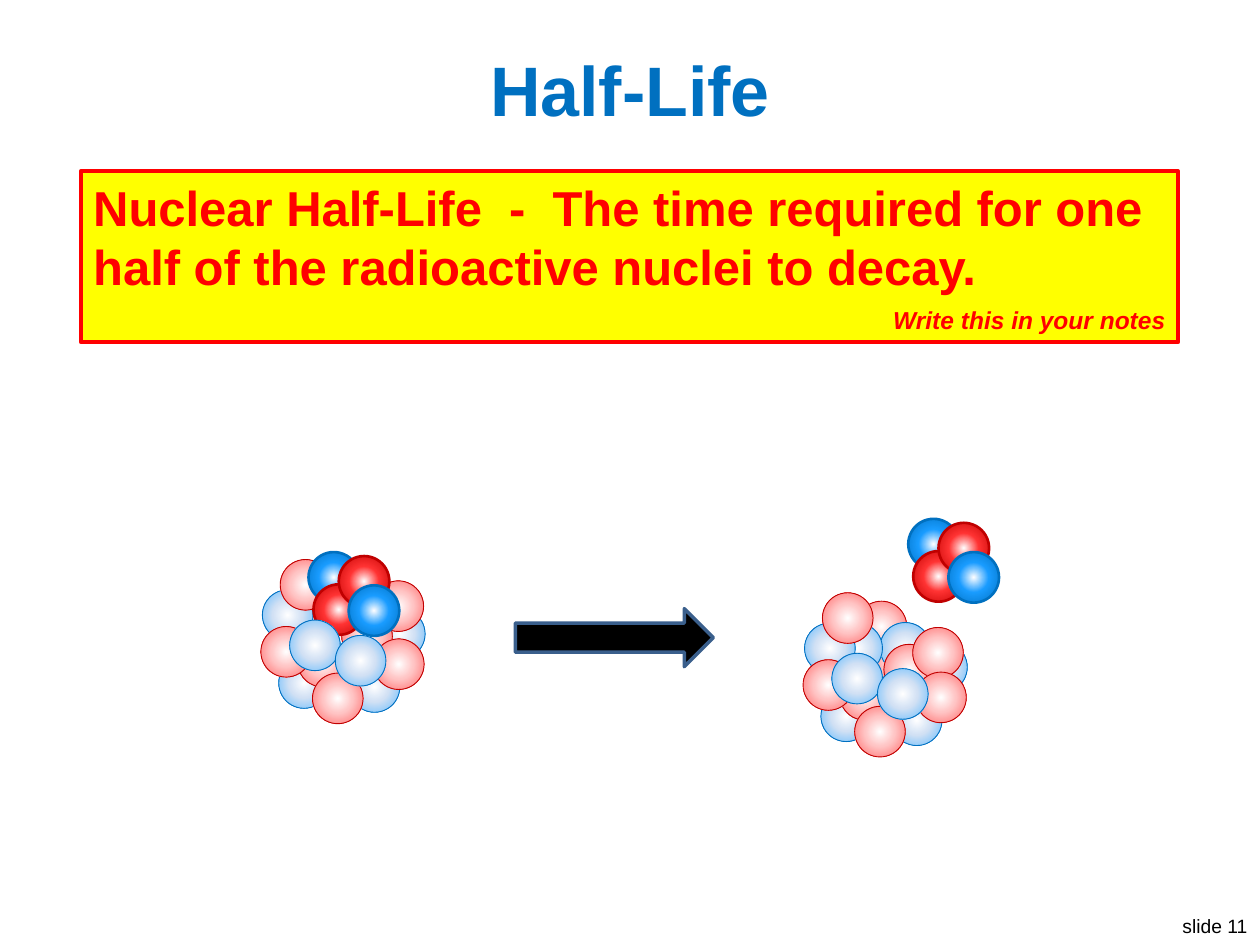
import pptx
import pptx.util
import pptx.dml.color
import pptx.enum.shapes
import pptx.enum.text
import pptx.oxml
import pptx.oxml.ns

Cm, Pt = pptx.util.Cm, pptx.util.Pt
RGBColor = pptx.dml.color.RGBColor
SHAPE = pptx.enum.shapes.MSO_SHAPE
ALIGN = pptx.enum.text.PP_ALIGN
ANCHOR = pptx.enum.text.MSO_ANCHOR

FONT = "Arial"
BLACK = RGBColor(0x00, 0x00, 0x00)
WHITE = RGBColor(0xFF, 0xFF, 0xFF)
RED = RGBColor(0xFF, 0x00, 0x00)
YELLOW = RGBColor(0xFF, 0xFF, 0x00)
BLUE = RGBColor(0x00, 0x70, 0xC0)
DARK_RED = RGBColor(0xC0, 0x00, 0x00)
STEEL = RGBColor(0x3A, 0x5F, 0x8C)

# Text: wording, size, bold, italic, colour, alignment, space before
TITLE = [("Half-Life", 40, True, False, BLUE, ALIGN.CENTER, 0)]
DEFINITION = [
    ("Nuclear Half-Life  -  The time required for one half of the radioactive "
     "nuclei to decay.", 28, True, False, RED, ALIGN.LEFT, 0),
    ("Write this in your notes", 14, True, True, RED, ALIGN.RIGHT, 6),
]
SLIDE_NUMBER = [("slide 11", 11, False, False, BLACK, ALIGN.RIGHT, 0)]

# Particle styles: middle colour, rim colour, outline colour, outline width
STYLES = {
    "neutron": (RGBColor(0xD2, 0xE1, 0xF4), RGBColor(0x59, 0xB8, 0xFF), BLUE, 0.5),
    "proton": (RGBColor(0xFF, 0xC5, 0xC5), RGBColor(0xFF, 0x65, 0x65), DARK_RED, 0.5),
    "alpha neutron": (RGBColor(0x19, 0x9C, 0xFF), BLUE, BLUE, 1.5),
    "alpha proton": (RGBColor(0xFF, 0x33, 0x33), DARK_RED, DARK_RED, 1.5),
}
PARTICLE_SIZE = 1.02

# Particles from back to front, in cm from the corner of their cluster
EXPOSED = [("proton", 1.07, 0.32), ("proton", 1.4, 1.05), ("neutron", 1.55, 0.75)]
BACK = [
    ("neutron", 0.58, 0.76), ("neutron", 2.29, 1.14), ("neutron", 1.78, 2.21),
    ("neutron", 0.36, 2.13), ("neutron", 0.03, 0.76),
    ("proton", 1.63, 1.19), ("proton", 0.74, 1.7),
]
PARENT_EDGE = [("proton", 2.26, 0.58)]
DAUGHTER_EDGE = [("proton", 2.21, 0.85)]
MIDDLE = [
    ("proton", 2.27, 1.75), ("proton", 1.04, 2.44),
    ("proton", 0, 1.5), ("proton", 0.39, 0.15),
]
FRONT = [("neutron", 0.58, 1.37), ("neutron", 1.5, 1.68)]
ALPHA = [
    ("alpha neutron", 0, 0), ("alpha proton", 0.1, 0.65),
    ("alpha proton", 0.61, 0.08), ("alpha neutron", 0.81, 0.67),
]

# Each nucleus: clusters with their left and top
PARENT = [
    (BACK + PARENT_EDGE + MIDDLE, 5.26, 11.13),
    (ALPHA, 6.22, 11.13),
    (FRONT, 5.26, 11.13),
]
DAUGHTER = [
    (EXPOSED + BACK + DAUGHTER_EDGE + MIDDLE + FRONT, 16.19, 11.8),
    (ALPHA, 18.31, 10.46),
]


def add_text(page, paragraphs, left, top, width, height, wrap=True):
    box = page.shapes.add_textbox(Cm(left), Cm(top), Cm(width), Cm(height))
    frame = box.text_frame
    frame.word_wrap = wrap
    for index, (words, size, bold, italic, colour, align, before) in enumerate(paragraphs):
        para = frame.add_paragraph() if index else frame.paragraphs[0]
        para.alignment = align
        para.space_before = Pt(before)
        span = para.add_run()
        span.text = words
        span.font.name = FONT
        span.font.size = Pt(size)
        span.font.bold = bold
        span.font.italic = italic
        span.font.color.rgb = colour
    return box


def outline(shape, colour, width):
    shape.line.color.rgb = colour
    shape.line.width = Pt(width)


def fill_radial(shape, stops):
    """Replace the fill with a gradient running from the centre to the rim."""
    shape.fill.background()
    marks = "".join(
        f'<a:gs pos="{percent * 1000}"><a:srgbClr val="{colour}"/></a:gs>'
        for percent, colour in stops)
    gradient = pptx.oxml.parse_xml(
        f'<a:gradFill {pptx.oxml.ns.nsdecls("a")} rotWithShape="1">'
        f'<a:gsLst>{marks}</a:gsLst><a:path path="circle">'
        '<a:fillToRect l="50000" t="50000" r="50000" b="50000"/>'
        '</a:path></a:gradFill>')
    properties = shape.element.spPr
    properties.replace(properties.find(pptx.oxml.ns.qn("a:noFill")), gradient)


def add_nucleus(page, clusters):
    group = page.shapes.add_group_shape()
    for particles, left, top in clusters:
        for kind, across, down in particles:
            middle, rim, edge, width = STYLES[kind]
            ball = group.shapes.add_shape(
                SHAPE.OVAL, Cm(left + across), Cm(top + down),
                Cm(PARTICLE_SIZE), Cm(PARTICLE_SIZE))
            ball.shadow.inherit = False
            fill_radial(ball, [(0, WHITE), (42, middle), (100, rim)])
            outline(ball, edge, width)


def main():
    deck = pptx.Presentation()
    deck.slide_width, deck.slide_height = Cm(25.4), Cm(19.05)
    page = deck.slides.add_slide(deck.slide_layouts[6])

    # Slide number, title and definition
    add_text(page, SLIDE_NUMBER, 23.5, 18.31, 1.9, 0.74, wrap=False)
    title = add_text(page, TITLE, 0.51, 0.76, 24.38, 2.03)
    title.text_frame.vertical_anchor = ANCHOR.MIDDLE
    definition = add_text(page, DEFINITION, 1.63, 3.45, 22.12, 3.45)
    definition.fill.solid()
    definition.fill.fore_color.rgb = YELLOW
    outline(definition, RED, 2.25)

    # Decay: parent nucleus, daughter nucleus with alpha particle, arrow
    add_nucleus(page, PARENT)
    add_nucleus(page, DAUGHTER)
    arrow = page.shapes.add_shape(
        SHAPE.RIGHT_ARROW, Cm(10.39), Cm(12.27), Cm(3.99), Cm(1.17))
    arrow.shadow.inherit = False
    arrow.fill.solid()
    arrow.fill.fore_color.rgb = BLACK
    outline(arrow, STEEL, 2)

    deck.save("out.pptx")


if __name__ == "__main__":
    main()
